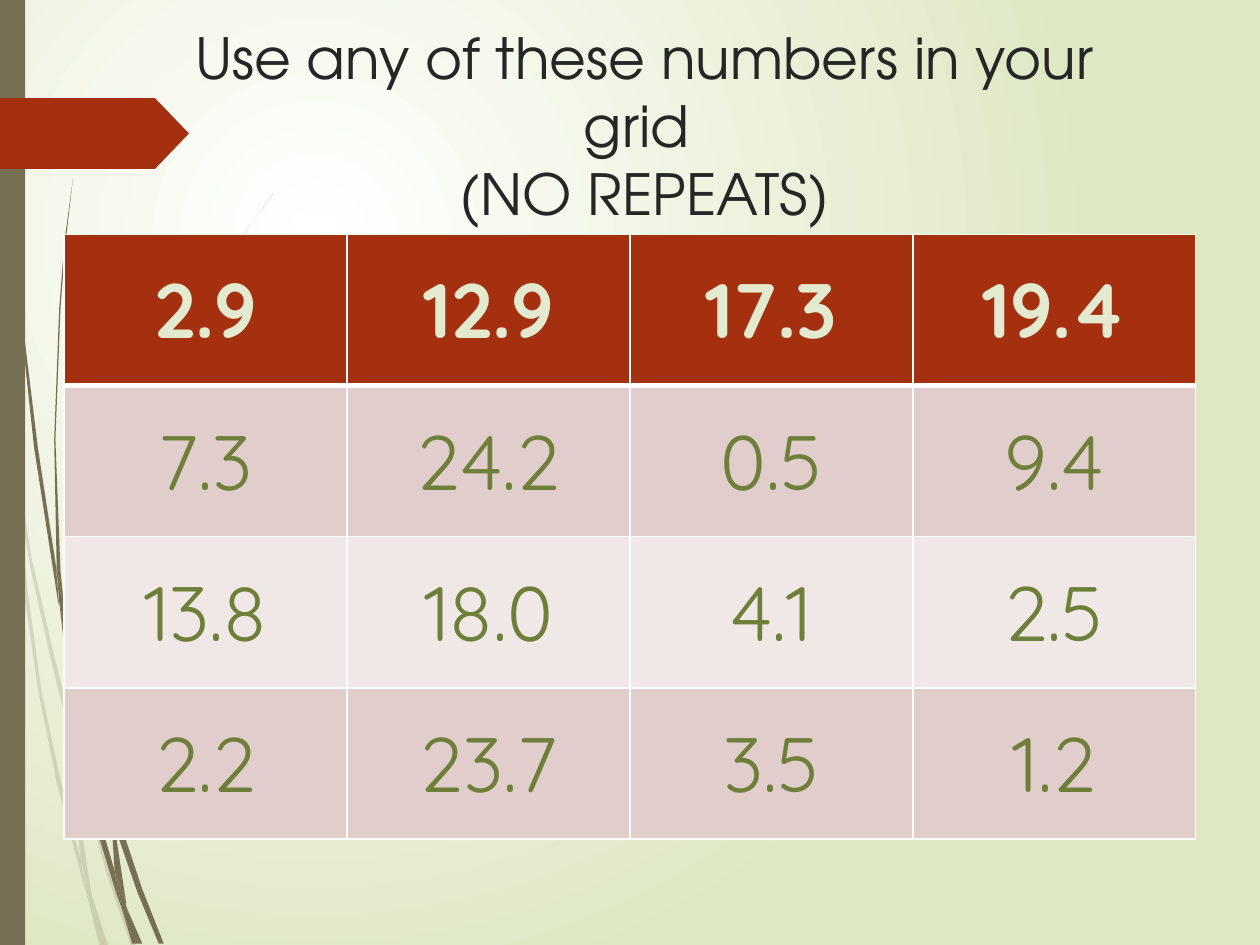
from lxml import etree
from pptx import Presentation
from pptx import util as u
from pptx.dml import color
from pptx.enum import shapes, text
from pptx.oxml import ns

COLORS = {
    "white": "FFFFFF",
    "meadow": "DFE8C4",
    "bark": "766F54",
    "rust": "A53010",
    "ink": "262626",
    "cream": "E3EACF",
    "olive": "6D7F39",
    "rose": "E1CDCC",
    "blush": "F0E8E7",
}

NUMBERS = [
    ["2.9", "12.9", "17.3", "19.4"],
    ["7.3", "24.2", "0.5", "9.4"],
    ["13.8", "18.0", "4.1", "2.5"],
    ["2.2", "23.7", "3.5", "1.2"],
]

GRID_UNIT = u.Inches(0.01)

PALE_BLADES = [
    [(8, 350), (6, 322), (0, 282), (0, 299), (7, 344)],
    [(40, 522), (59, 599), (59, 586), (43, 520), (25, 443), (10, 345), (12, 376), (24, 450)],
    [(64, 607), (61, 596), (61, 610), (85, 694), (104, 751), (108, 751), (88, 692)],
    [(83, 751), (86, 751), (73, 711)],
    [(64, 683), (48, 619), (33, 549), (22, 469), (12, 376), (8, 350), (19, 470),
     (30, 546), (45, 621), (64, 693), (70, 714), (69, 707)],
    [(58, 599), (60, 646), (64, 683), (67, 692), (73, 711), (72, 706), (63, 646),
     (61, 610), (61, 608)],
    [(61, 584), (65, 523), (76, 462), (92, 405), (111, 349), (134, 296), (159, 245),
     (187, 198), (201, 175), (217, 154), (217, 153), (201, 175), (186, 197), (158, 244),
     (133, 295), (110, 348), (91, 404), (75, 461), (64, 522), (59, 584), (59, 586), (61, 596)],
    [(70, 714), (79, 751), (82, 751)],
    [(61, 608), (61, 610), (61, 596), (59, 586), (58, 599)],
    [(67, 692), (65, 683), (69, 707), (70, 714), (82, 751), (83, 751), (73, 711)],
]

DARK_BLADES = [
    [(5, 110), (14, 233), (27, 355), (46, 477), (47, 481), (45, 457), (45, 453),
     (30, 355), (15, 232), (6, 109), (4, 48), (3, 0), (2, 0), (3, 48)],
    [(73, 592), (88, 645), (88, 633), (88, 631), (77, 590), (62, 532), (50, 472),
     (53, 505), (62, 549)],
    [(94, 649), (91, 641), (91, 656), (109, 708), (126, 749), (130, 749), (113, 706)],
    [(91, 691), (81, 657), (69, 607), (60, 556), (53, 505), (47, 477), (56, 557),
     (65, 608), (77, 659), (92, 708), (97, 722), (96, 717)],
    [(50, 472), (48, 453), (44, 349), (48, 245), (52, 193), (58, 141), (51, 193),
     (47, 245), (43, 349), (45, 449), (49, 472)],
    [(110, 749), (113, 749), (100, 719)],
    [(47, 477), (53, 505), (50, 472), (49, 472), (45, 449), (45, 453)],
    [(91, 633), (95, 592), (103, 552), (115, 513), (131, 476), (149, 440), (169, 406),
     (191, 374), (203, 359), (216, 344), (215, 344), (203, 358), (191, 373), (168, 405),
     (147, 439), (129, 474), (113, 512), (101, 551), (92, 591), (88, 631), (91, 641)],
    [(97, 722), (105, 749), (108, 749)],
    [(88, 645), (91, 691), (96, 706), (100, 719), (100, 716), (91, 656), (90, 651)],
    [(88, 645), (90, 651), (91, 656), (91, 641), (88, 631), (88, 633)],
    [(96, 706), (91, 691), (96, 717), (97, 722), (108, 749), (110, 749), (100, 719)],
]


def rgb(name):
    return color.RGBColor.from_string(COLORS[name])


def write(frame, words, font, size, ink, bold=False):
    frame.text = words
    para = frame.paragraphs[0]
    para.alignment = text.PP_ALIGN.CENTER
    for span in para.runs:
        span.font.name = font
        span.font.size = u.Pt(size)
        span.font.bold = bold
        span.font.color.rgb = rgb(ink)


def paint(shape, name, opacity=100):
    shape.shadow.inherit = False
    shape.fill.solid()
    shape.fill.fore_color.rgb = rgb(name)
    shape.line.fill.background()
    if opacity < 100:
        tint = shape.element.find(".//" + ns.qn("a:srgbClr"))
        etree.SubElement(tint, ns.qn("a:alpha"), val=str(opacity * 1000))


def set_background(page):
    fill = page.background.fill
    fill.gradient()
    for stop, name, position in zip(fill.gradient_stops, ("white", "meadow"), (0, 1)):
        stop.color.rgb = rgb(name)
        stop.position = position
    gradient = page.element.find(".//" + ns.qn("a:gradFill"))
    linear = gradient.find(ns.qn("a:lin"))
    circle = etree.Element(ns.qn("a:path"), path="circle")
    etree.SubElement(circle, ns.qn("a:fillToRect"), l="50000", t="50000", r="100000", b="100000")
    gradient.replace(linear, circle)


def add_blades(page, blades, opacity):
    for start, *rest in blades:
        builder = page.shapes.build_freeform(*start, scale=GRID_UNIT)
        builder.add_line_segments(rest, close=True)
        paint(builder.convert_to_shape(), "bark", opacity)


def add_block(page, kind, left, top, width, height, name):
    block = page.shapes.add_shape(
        kind, u.Inches(left), u.Inches(top), u.Inches(width), u.Inches(height))
    paint(block, name)
    return block


def add_title(page, words):
    title = page.shapes.title
    title.left, title.top = u.Inches(0.98), u.Inches(0.13)
    title.width, title.height = u.Inches(8.27), u.Inches(1.4)
    frame = title.text_frame
    frame.word_wrap = True
    frame.auto_size = text.MSO_AUTO_SIZE.NONE
    frame.vertical_anchor = text.MSO_ANCHOR.TOP
    write(frame, words, font="TeX Gyre Adventor", size=32.4, ink="ink")
    page.shapes.element.append(title.element)


def set_borders(cell, top, bottom):
    properties = cell._tc.get_or_add_tcPr()
    sides = (("a:lnL", 1), ("a:lnR", 1), ("a:lnT", top), ("a:lnB", bottom))
    for index, (side, width) in enumerate(sides):
        line = etree.Element(ns.qn(side), w=str(u.Pt(width)))
        fill = etree.SubElement(line, ns.qn("a:solidFill"))
        etree.SubElement(fill, ns.qn("a:srgbClr"), val=COLORS["white"])
        properties.insert(index, line)


def add_number_table(page):
    table = page.shapes.add_table(
        len(NUMBERS), len(NUMBERS[0]),
        u.Inches(0.51), u.Inches(1.86), u.Inches(8.98), u.Inches(4.8)).table
    fills = ["rust", "rose", "blush", "rose"]
    for row, values in enumerate(NUMBERS):
        header = row == 0
        for column, value in enumerate(values):
            cell = table.cell(row, column)
            cell.vertical_anchor = text.MSO_ANCHOR.MIDDLE
            cell.fill.solid()
            cell.fill.fore_color.rgb = rgb(fills[row])
            write(cell.text_frame, value, font="Quicksand", size=44,
                  ink="cream" if header else "olive", bold=header)
            set_borders(cell, top=3 if row == 1 else 1, bottom=3 if header else 1)


def main():
    deck = Presentation()
    deck.slide_width, deck.slide_height = u.Inches(10), u.Inches(7.5)
    page = deck.slides.add_slide(deck.slide_layouts[5])
    set_background(page)
    add_blades(page, PALE_BLADES, opacity=20)
    add_blades(page, DARK_BLADES, opacity=100)
    add_block(page, shapes.MSO_SHAPE.RECTANGLE, 0, 0, 0.2, 7.5, "bark")
    marker = add_block(page, shapes.MSO_SHAPE.PENTAGON, 0, 0.78, 1.5, 0.56, "rust")
    marker.adjustments[0] = 0.48
    add_title(page, "Use any of these numbers in your grid \v(NO REPEATS)")
    add_number_table(page)
    deck.save("out.pptx")


if __name__ == "__main__":
    main()
